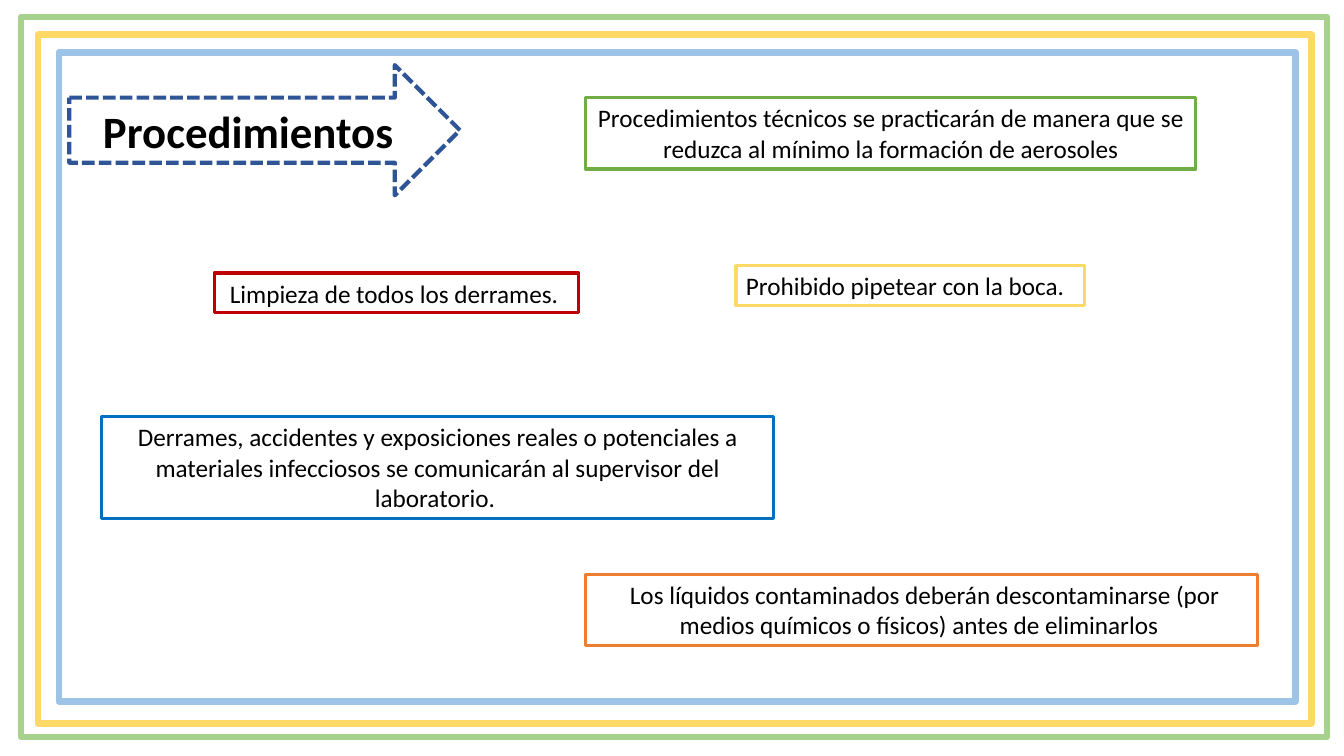
"""Build the laboratory procedures slide."""
from pptx import Presentation
from pptx.dml.color import RGBColor
from pptx.enum.dml import MSO_LINE
from pptx.enum.shapes import MSO_SHAPE
from pptx.enum.text import MSO_ANCHOR, PP_ALIGN
from pptx.util import Emu, Pt

PX = 9525
FONT = "Calibri"
RECT, ARROW = MSO_SHAPE.RECTANGLE, MSO_SHAPE.RIGHT_ARROW
DASH = MSO_LINE.SQUARE_DOT
LEFT, CENTER = PP_ALIGN.LEFT, PP_ALIGN.CENTER
TOP, MIDDLE = MSO_ANCHOR.TOP, MSO_ANCHOR.MIDDLE

FRAMES = [
    ((20, 16, 1244, 686), "A9D18E"),
    ((36, 33, 1213, 656), "FFD966"),
    ((56, 50, 1178, 618), "9DC3E6"),
]
RULES = [
    ((701, 253, 332, 38), "FFD966", "FFFFFF", LEFT,
     "Prohibido pipetear con la boca."),
    ((558, 93, 581, 68), "70AD47", "FFFFFF", CENTER,
     "Procedimientos técnicos se practicarán de manera que se "
     "reduzca al mínimo la formación de aerosoles"),
    ((97, 397, 640, 97), "0070C0", None, CENTER,
     "Derrames, accidentes y exposiciones reales o potenciales a "
     "materiales infecciosos se comunicarán al supervisor del laboratorio. "),
    ((204, 260, 347, 38), "C00000", None, LEFT,
     " Limpieza de todos los derrames."),
    ((558, 547, 640, 68), "ED7D31", None, CENTER,
     " Los líquidos contaminados deberán descontaminarse (por "
     "medios químicos o físicos) antes de eliminarlos "),
]


def px(n):
    """Turn pixels into EMU."""
    return Emu(n * PX)


def color(value):
    """Turn a hex string into a colour."""
    return RGBColor.from_string(value)


def add_outline(slide, kind, box, line, width, fill=None):
    """Add an outlined shape, filled only if a colour is given."""
    sp = slide.shapes.add_shape(kind, *map(px, box))
    sp.shadow.inherit = False
    if fill:
        sp.fill.solid()
        sp.fill.fore_color.rgb = color(fill)
    else:
        sp.fill.background()
    sp.line.color.rgb = color(line)
    sp.line.width = Pt(width)
    return sp


def write(sp, text, size, align, anchor, bold=False):
    """Write one formatted paragraph into a shape."""
    tf = sp.text_frame
    tf.word_wrap = True
    tf.vertical_anchor = anchor
    p = tf.paragraphs[0]
    p.alignment = align
    p.line_spacing = 1.0
    r = p.add_run()
    r.text = text
    r.font.name = FONT
    r.font.size = Pt(size)
    r.font.bold = bold
    r.font.color.rgb = color("000000")


def add_title(slide, text):
    """Draw the dashed arrow and set the title over its text area."""
    arrow = add_outline(slide, ARROW, (66, 62, 372, 124), "2F5597", 3, "FFFFFF")
    arrow.line.dash_style = DASH
    sp = slide.shapes.title
    sp.left, sp.top, sp.width, sp.height = map(px, (66, 93, 341, 62))
    arrow.element.addnext(sp.element)
    write(sp, text, 32, CENTER, MIDDLE, True)


def main():
    """Build and save the slide."""
    prs = Presentation()
    prs.slide_width, prs.slide_height = px(1280), px(720)
    slide = prs.slides.add_slide(prs.slide_layouts[5])
    for box, line in FRAMES:
        add_outline(slide, RECT, box, line, 4.5)
    add_title(slide, "Procedimientos")
    for box, line, fill, align, text in RULES:
        sp = add_outline(slide, RECT, box, line, 2.25, fill)
        write(sp, text, 18, align, TOP)
    prs.save("out.pptx")


if __name__ == "__main__":
    main()
